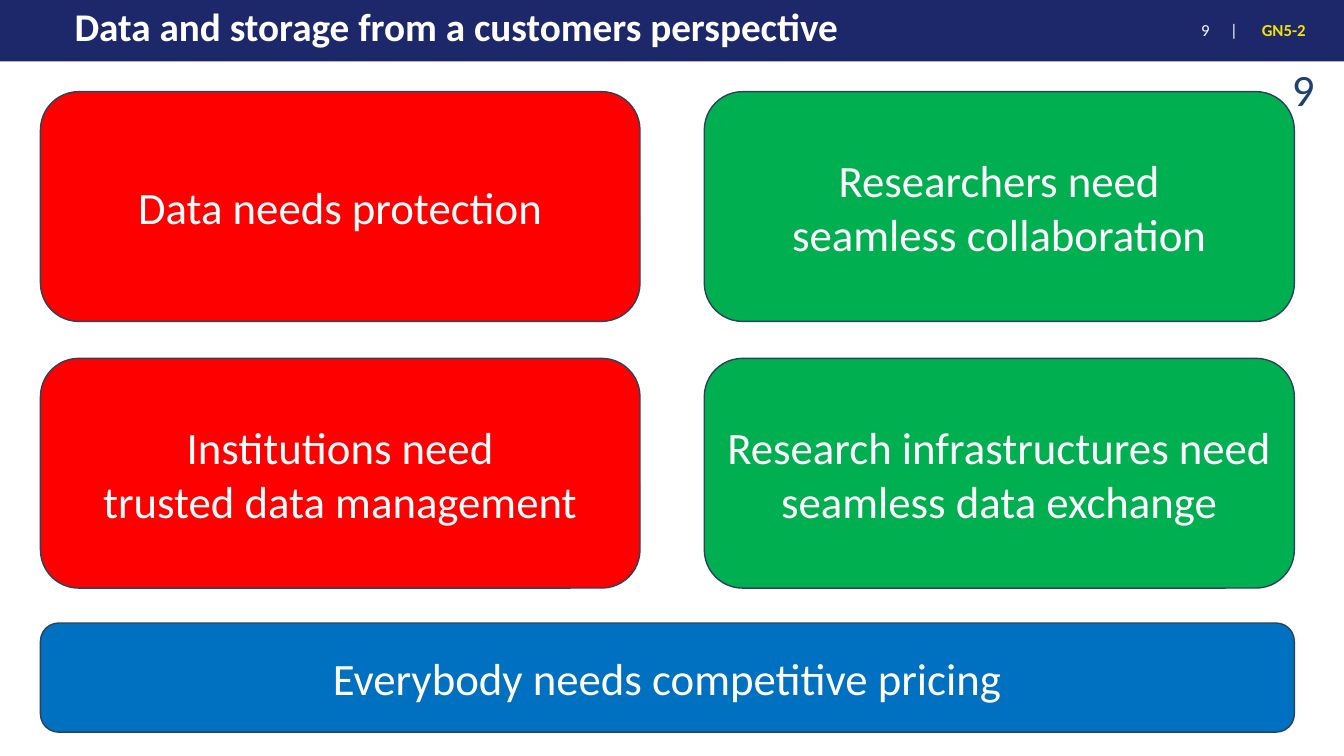
from dataclasses import dataclass

import pptx
import pptx.dml.color
import pptx.enum.shapes
import pptx.enum.text
import pptx.oxml
import pptx.oxml.ns
import pptx.util
from pptx.util import Cm

ALIGN = pptx.enum.text.PP_ALIGN
ANCHOR = pptx.enum.text.MSO_ANCHOR
SHAPE = pptx.enum.shapes.MSO_SHAPE


@dataclass(frozen=True)
class Theme:
    font: str = "Calibri"
    navy: str = "1D286B"
    white: str = "FFFFFF"
    yellow: str = "F4E200"
    number: str = "1F4270"
    outline: str = "28445D"
    red: str = "FF0000"
    green: str = "00B050"
    blue: str = "0070C0"
    title: int = 28
    body: int = 32
    small: int = 12


THEME = Theme()


def rgb(value):
    return pptx.dml.color.RGBColor.from_string(value)


def set_text(sp, text, size, color, align, anchor, bold=False):
    tf = sp.text_frame
    tf.word_wrap = True
    tf.vertical_anchor = anchor
    tf.text = text
    for p in tf.paragraphs:
        p.alignment = align
        for r in p.runs:
            r.font.name = THEME.font
            r.font.size = pptx.util.Pt(size)
            r.font.bold = bold
            r.font.color.rgb = rgb(color)
    return tf


def add_text(s, box, text, size, color, align=ALIGN.LEFT, anchor=ANCHOR.TOP, bold=False):
    sp = s.shapes.add_textbox(*map(Cm, box))
    return set_text(sp, text, size, color, align, anchor, bold)


def add_panel(s, shape, box, fill):
    sp = s.shapes.add_shape(shape, *map(Cm, box))
    sp.shadow.inherit = False
    sp.fill.solid()
    sp.fill.fore_color.rgb = rgb(fill)
    sp.line.fill.background()
    return sp


def add_card(s, box, fill, text):
    sp = add_panel(s, SHAPE.ROUNDED_RECTANGLE, box, fill)
    sp.line.color.rgb = rgb(THEME.outline)
    sp.line.width = pptx.util.Pt(1)
    set_text(sp, text, THEME.body, THEME.white, ALIGN.CENTER, ANCHOR.MIDDLE)


def add_tab_stop(p, position):
    tabs = pptx.oxml.parse_xml(
        f'<a:tabLst {pptx.oxml.ns.nsdecls("a")}><a:tab pos="{position}" algn="l"/></a:tabLst>'
    )
    p._p.get_or_add_pPr().append(tabs)


def add_header(s, width):
    add_panel(s, SHAPE.RECTANGLE, (0, 0, width, 1.55), THEME.navy)
    tf = add_text(s, (29.57, 0.3, 1.85, 0.91), "9\t|", THEME.small, THEME.white,
                  anchor=ANCHOR.MIDDLE)
    tf.margin_left = Cm(0.7)
    tf.margin_right = 0
    add_tab_stop(tf.paragraphs[0], Cm(0.73))
    tf = add_text(s, (31.55, 0.38, 2.3, 0.81), "GN5-2", THEME.small, THEME.yellow,
                  anchor=ANCHOR.MIDDLE, bold=True)
    tf.paragraphs[0].line_spacing = 0.9
    tf = add_text(s, (1.63, 0.08, 26.09, 2.08),
                  "Data and storage from a customers perspective",
                  THEME.title, THEME.white, bold=True)
    tf.paragraphs[0].line_spacing = 0.9


def add_needs(s):
    top, height, pitch = 2.31, 5.79, 6.72
    columns = (
        (1.02, 15.11, THEME.red,
         ("Data needs protection", "Institutions need\ntrusted data management")),
        (17.75, 14.87, THEME.green,
         ("Researchers need\nseamless collaboration",
          "Research infrastructures need seamless data exchange")),
    )
    for left, width, fill, needs in columns:
        for row, need in enumerate(needs):
            add_card(s, (left, top + row * pitch, width, height), fill, need)
    add_card(s, (1.02, top + 2 * pitch - 0.05, 31.6, 2.75), THEME.blue,
             "Everybody needs competitive pricing")


def main():
    prs = pptx.Presentation()
    prs.slide_width, prs.slide_height = Cm(33.87), Cm(19.05)
    s = prs.slides.add_slide(prs.slide_layouts[6])
    add_header(s, 33.87)
    add_text(s, (31.8, 1.42, 1.58, 0.89), "9", THEME.body, THEME.number, ALIGN.RIGHT)
    add_needs(s)
    prs.save("out.pptx")


if __name__ == "__main__":
    main()
